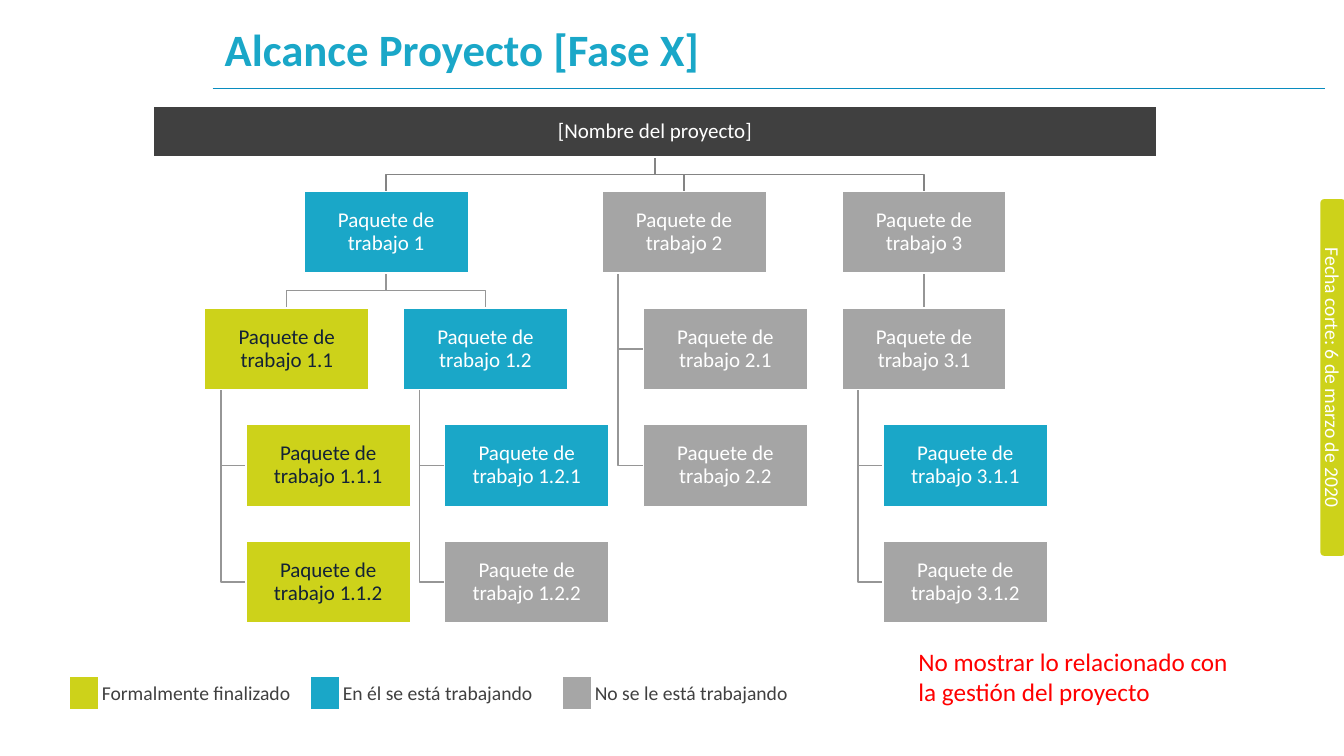
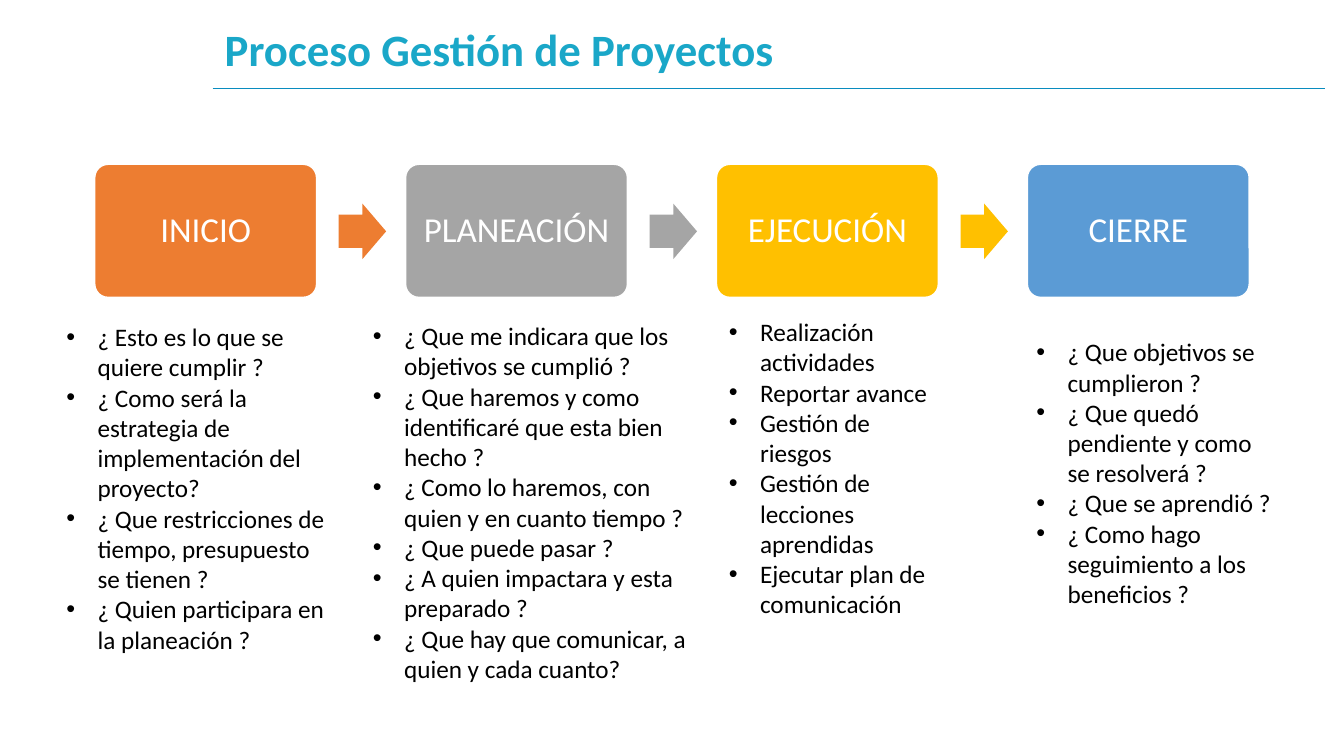
from lxml import etree
from pptx import Presentation
from pptx import util as u
from pptx.dml import color
from pptx.enum import shapes, text
from pptx.oxml import ns

WIDE, HIGH = 13.33, 7.5
FONT = "Calibri"
BLUE, LIME, GREY, DARK, WHITE = "1AA7C8", "CDD21A", "A5A5A5", "404040", "FFFFFF"
RECT, ROUND, ARROW = (shapes.MSO_SHAPE.RECTANGLE, shapes.MSO_SHAPE.ROUNDED_RECTANGLE,
                      shapes.MSO_SHAPE.RIGHT_ARROW)
MID, TOP = text.MSO_ANCHOR.MIDDLE, text.MSO_ANCHOR.TOP
LEFT, CENTER = text.PP_ALIGN.LEFT, text.PP_ALIGN.CENTER
PLAIN = "{2D5ABB26-0587-4C30-8999-92F81FD0307C}"
SIDES = ("left", "right", "top", "bottom")

STATES = {
    "done": (LIME, "132236"),
    "busy": (BLUE, WHITE),
    "idle": (GREY, WHITE),
}
NODES = [
    ("1", "busy", 0.5, 0, 0),
    ("1.1", "done", 0, 0, 1),
    ("1.1.1", "done", 0, 1, 2),
    ("1.1.2", "done", 0, 1, 3),
    ("1.2", "busy", 1, 0, 1),
    ("1.2.1", "busy", 1, 1, 2),
    ("1.2.2", "idle", 1, 1, 3),
    ("2", "idle", 2, 0, 0),
    ("2.1", "idle", 2, 1, 1),
    ("2.2", "idle", 2, 1, 2),
    ("3", "idle", 3, 1, 0),
    ("3.1", "idle", 3, 1, 1),
    ("3.1.1", "busy", 3, 2, 2),
    ("3.1.2", "idle", 3, 2, 3),
]
ROOT = (1.52, 1.05, 9.95, 0.51)
ROW = (5.37 - 1.9) / 3
LEGEND = [
    (LIME, "Formalmente finalizado", 2.11),
    (BLUE, "En él se está trabajando", 2.22),
    ("A6A6A6", "No se le está trabajando", 2.42),
]
PITCH = (10.19 - 0.94) / 3
STEPS = [
    ("INICIO", "ED7D31", (0.56, 3.14, 2.83, 3.74), [
        "¿ Esto es lo que se quiere cumplir ?",
        "¿ Como será la estrategia de implementación del proyecto?",
        "¿ Que restricciones de tiempo, presupuesto se tienen ?",
        "¿ Quien participara en la planeación ?",
    ]),
    ("PLANEACIÓN", GREY, (3.6, 3.13, 3.53, 4.04), [
        "¿ Que me indicara que los objetivos se cumplió ?",
        "¿ Que haremos y como identificaré que esta bien hecho ?",
        "¿ Como lo haremos, con quien y en cuanto tiempo ?",
        "¿ Que puede pasar ?",
        "¿ A quien impactara y esta preparado ?",
        "¿ Que hay que comunicar, a quien y cada cuanto?",
    ]),
    ("EJECUCIÓN", "FFC000", (7.13, 3.09, 2.21, 3.13), [
        "Realización actividades",
        "Reportar avance",
        "Gestión de riesgos",
        "Gestión de lecciones aprendidas",
        "Ejecutar plan de comunicación",
    ]),
    ("CIERRE", "5B9BD5", (10.18, 3.29, 2.59, 2.83), [
        "¿ Que objetivos se cumplieron ?",
        "¿ Que quedó pendiente y como se resolverá ?",
        "¿ Que se aprendió ?",
        "¿ Como hago seguimiento a los beneficios ?",
    ]),
]


def rgb(code):
    return color.RGBColor.from_string(code)


def put(thing, **attrs):
    for key, value in attrs.items():
        setattr(thing, key, value)


def pad(thing, gap):
    put(thing, **{"margin_" + side: u.Inches(gap) for side in SIDES})


def inches(box):
    return [u.Inches(n) for n in box]


def bullet(para):
    props = para._p.get_or_add_pPr()
    props.set("marL", str(u.Inches(0.31)))
    props.set("indent", str(-u.Inches(0.31)))
    etree.SubElement(props, ns.qn("a:buFont")).set("typeface", "Arial")
    etree.SubElement(props, ns.qn("a:buChar")).set("char", "•")


def write(frame, lines, size, ink, bold=False, align=LEFT, space=1.0, dots=False):
    for i, line in enumerate(lines):
        para = frame.add_paragraph() if i else frame.paragraphs[0]
        put(para, alignment=align, line_spacing=space)
        if dots:
            bullet(para)
        run = para.add_run()
        run.text = line
        put(run.font, name=FONT, size=u.Pt(size), bold=bold)
        run.font.color.rgb = rgb(ink)


def label(slide, box, lines, size, ink, anchor=TOP, **style):
    frame = slide.shapes.add_textbox(*inches(box)).text_frame
    put(frame, word_wrap=True, vertical_anchor=anchor)
    write(frame, lines, size, ink, **style)


def block(slide, kind, box, fill, words="", size=15, ink=WHITE, edge=True,
          inset=0.1, space=0.9):
    shape = slide.shapes.add_shape(kind, *inches(box))
    shape.shadow.inherit = False
    shape.fill.solid()
    shape.fill.fore_color.rgb = rgb(fill)
    if edge:
        shape.line.color.rgb = rgb(WHITE)
        shape.line.width = u.Pt(1)
    else:
        shape.line.fill.background()
    if words:
        frame = shape.text_frame
        put(frame, word_wrap=True, vertical_anchor=MID)
        pad(frame, inset)
        write(frame, [words], size, ink, align=CENTER, space=space)
    return shape


def trace(slide, points, ink):
    first, *rest = [inches(p) for p in points]
    pen = slide.shapes.build_freeform(*first)
    pen.add_line_segments(rest, close=False)
    shape = pen.convert_to_shape()
    shape.shadow.inherit = False
    shape.fill.background()
    shape.line.color.rgb = rgb(ink)
    shape.line.width = u.Pt(1)


def start(deck, title):
    slide = deck.slides.add_slide(deck.slide_layouts[6])
    rule = slide.shapes.add_connector(shapes.MSO_CONNECTOR.STRAIGHT,
                                      *inches((2.11, 0.88, 13.14, 0.88)))
    rule.line.color.rgb = rgb("098CBF")
    rule.line.width = u.Pt(0.5)
    etree.SubElement(rule._element.spPr, ns.qn("a:effectLst"))
    label(slide, (2.13, 0.23, 11.01, 0.57), [title], 32, BLUE, MID,
          bold=True, space=0.9)
    return slide


def link(slide, above, below, hangs, ink):
    x, y, w, h = above
    left, top, wide, tall = below
    foot = y + h
    if hangs:
        spine, level = x + 0.16, top + tall / 2
        points = [(spine, foot), (spine, level), (left, level)]
    else:
        stem, drop, bend = x + w / 2, left + wide / 2, (foot + top) / 2
        points = [(stem, foot), (stem, bend), (drop, bend), (drop, top)]
    trace(slide, points, ink)


def tree(slide):
    boxes, grid = {"": ROOT}, {}
    for num, _, col, step, row in NODES:
        boxes[num] = (2.03 + 1.97 * col + 0.41 * step, 1.9 + ROW * row, 1.63, 0.81)
        grid[num] = col, step
    for num in reversed(grid):
        above = num.rpartition(".")[0]
        col, step = grid[num]
        hangs = grid.get(above) == (col, step - 1)
        link(slide, boxes[above], boxes[num], hangs, "969696" if above else "848484")
    block(slide, RECT, ROOT, DARK, "[Nombre del proyecto]")
    for num, state, *_ in NODES:
        fill, ink = STATES[state]
        block(slide, RECT, boxes[num], fill, f"Paquete de trabajo {num}", ink=ink)


def legend(slide):
    swatch = 0.28
    total = sum(swatch + w for _, _, w in LEGEND)
    frame = slide.shapes.add_table(1, 2 * len(LEGEND), *inches((0.69, 6.72, total, 0.31)))
    table = frame.table
    put(table, first_row=False, horz_banding=False)
    table._tbl.tblPr.find(ns.qn("a:tableStyleId")).text = PLAIN
    for i, (fill, words, wide) in enumerate(LEGEND):
        for j, width, gap in ((2 * i, swatch, 0), (2 * i + 1, wide, 0.04)):
            table.columns[j].width = u.Inches(width)
            pad(table.cell(0, j), gap)
        mark, note = table.cell(0, 2 * i), table.cell(0, 2 * i + 1)
        mark.fill.solid()
        mark.fill.fore_color.rgb = rgb(fill)
        note.fill.background()
        write(note.text_frame, [words], 14, DARK)


def scope(deck):
    slide = start(deck, "Alcance Proyecto [Fase X]")
    tree(slide)
    legend(slide)
    label(slide, (9.01, 6.36, 3.29, 0.71),
          ["No mostrar lo relacionado con la gestión del proyecto"], 18, "FF0000")
    tab = block(slide, ROUND, (11.45, 3.62, 3.54, 0.25), LIME,
                "Fecha corte: 6 de marzo de 2020", 14, edge=False, inset=0.01, space=1.0)
    tab.adjustments[0] = 0.16
    tab.rotation = 90


def process(deck):
    slide = start(deck, "Proceso Gestión de Proyectos")
    for i, (name, fill, box, items) in enumerate(STEPS):
        x = 0.94 + PITCH * i
        card = block(slide, ROUND, (x, 1.63, 2.2, 1.32), fill, name, 25)
        card.adjustments[0] = 0.1
        if i < len(STEPS) - 1:
            arrow = block(slide, ARROW, (x + 2.42, 2.02, 0.47, 0.55), fill, edge=False)
            arrow.adjustments[0] = 0.6
        label(slide, box, items, 18, "000000", dots=True)


def main():
    deck = Presentation()
    put(deck, slide_width=u.Inches(WIDE), slide_height=u.Inches(HIGH))
    scope(deck)
    process(deck)
    deck.save("out.pptx")


if __name__ == "__main__":
    main()
